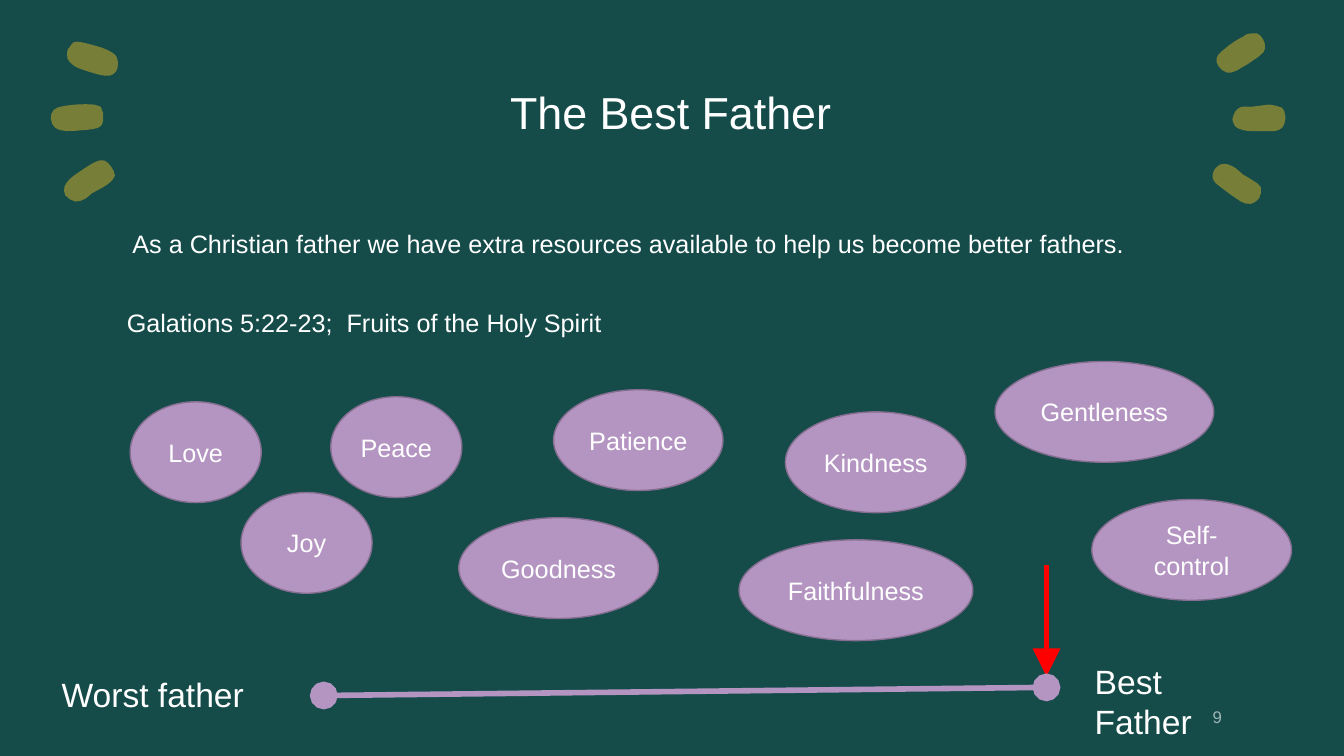
from lxml import etree
from pptx import Presentation, util as u
from pptx.dml.color import RGBColor
from pptx.enum import shapes, text
from pptx.oxml.ns import qn

NIGHT = RGBColor(0x0B, 0x28, 0x27)
TEAL = RGBColor(0x15, 0x4C, 0x4A)
OLIVE = RGBColor(0x76, 0x7E, 0x37)
LILAC = RGBColor(0xB4, 0x95, 0xC2)
PLUM = RGBColor(0x85, 0x6E, 0x90)
RED = RGBColor(0xFF, 0x00, 0x00)
WHITE = RGBColor(0xFF, 0xFF, 0xFF)
FONT = "Arial"
CURVE_STEPS = 2

LEFT_RAYS = [
    [(22.3, 10.2), (16.6, 10.2), (13.7, 13.8), (12.2, 16), (12.2, 21.8), (15.8, 26.1), (20.9, 29),
     (34.6, 33.3), (42.5, 34), (46.8, 31.1), (48.2, 26.8), (47.5, 21), (43.9, 17.4), (36, 13.8)],
    [(30.2, 72.2), (23.8, 72.9), (11.5, 73.6), (3.5, 71.4), (0.3, 65), (2.3, 58.5),
     (10.1, 55.6), (25.2, 54.4), (36, 56.3), (37.7, 65.7), (35.5, 70.5)],
    [(42.5, 110.3), (37.4, 113.9), (29.5, 118.2), (25.2, 121.8), (18, 124), (10.8, 119.7), (10.1, 113.2),
     (14.4, 107.4), (20.2, 103.1), (24.5, 100.2), (31.7, 95.9), (38.2, 94.5), (43.2, 98.8), (46.1, 105.3)],
]
RIGHT_RAYS = [
    [(8.6, 16.7), (18, 9.5), (24.5, 5.9), (26.6, 4.5), (33.8, 3.8), (38.2, 8.1),
     (39.6, 14.6), (35.3, 20.3), (19.4, 30.4), (12.2, 31.8), (6.5, 27.5), (5, 21.8)],
    [(46.8, 73.6), (38.9, 73.6), (28.8, 73.6), (23.8, 72.9), (18.7, 70.7), (16.6, 66.4), (16.6, 64.2), (18.7, 59.2),
     (23, 56.3), (29.5, 56.3), (41, 54.9), (43.9, 54.9), (51.8, 57), (54, 62.1), (54, 66.4), (51.8, 71.4)],
    [(2.9, 108.9), (2.2, 105.3), (2.9, 102.4), (4.3, 100.2), (7.9, 97.4), (13, 97.4), (18.7, 100.2), (23.8, 104.6),
     (31, 108.9), (36.7, 113.9), (35.3, 121.8), (30.2, 125.4), (27.4, 125.4), (22.3, 124), (7.2, 113.2)],
]
FRUITS = [
    ("Love", 0, 28.8, 93.6),
    ("Goodness", 234.7, 111.6, 142.6),
    ("Kindness", 468, 36, 129),
    ("Patience", 302.4, 20.2, 121),
    ("Peace", 143.3, 25.2, 93.6),
    ("Joy", 79.2, 93.6, 93.6),
    ("Faithfulness", 434.9, 127.4, 167),
    ("Gentleness", 617.8, 0, 156.2),
    ("Self-control", 686.9, 98.6, 142.6),
]
FRUIT_HEIGHT = 72


def paint(shape, color):
    shape.shadow.inherit = False
    shape.fill.solid()
    shape.fill.fore_color.rgb = color
    shape.line.fill.background()


def add_run(paragraph, words, size):
    run = paragraph.add_run()
    run.text = words
    run.font.name = FONT
    run.font.size = u.Pt(size)
    run.font.color.rgb = WHITE
    return run


def add_label(slide, box, words, size):
    label = slide.shapes.add_textbox(*map(u.Pt, box))
    label.text_frame.word_wrap = True
    return label.text_frame, add_run(label.text_frame.paragraphs[0], words, size)


def set_insets(frame, vertical):
    frame.margin_left = frame.margin_right = 0
    frame.margin_top = frame.margin_bottom = u.Pt(vertical)
    frame.vertical_anchor = text.MSO_ANCHOR.MIDDLE


def add_backdrop(slide, box):
    slide.background.fill.solid()
    slide.background.fill.fore_color.rgb = NIGHT
    paint(slide.shapes.add_shape(shapes.MSO_SHAPE.RECTANGLE, *map(u.Pt, box)), TEAL)


def smooth_outline(knots):
    count = len(knots)
    points = []
    for index in range(count):
        before, start, end, after = (knots[(index + shift) % count] for shift in (-1, 0, 1, 2))
        for step in range(CURVE_STEPS):
            t = step / CURVE_STEPS
            points.append(tuple(
                0.5 * (2 * b + (c - a) * t + (2 * a - 5 * b + 4 * c - d) * t ** 2
                       + (3 * b - a - 3 * c + d) * t ** 3)
                for a, b, c, d in zip(before, start, end, after)))
    return points


def add_rays(slide, left, top, rays):
    for knots in rays:
        points = [(u.Pt(left + x), u.Pt(top + y)) for x, y in smooth_outline(knots)]
        builder = slide.shapes.build_freeform(*points[0])
        builder.add_line_segments(points[1:], close=True)
        paint(builder.convert_to_shape(), OLIVE)


def add_title(slide, box):
    frame, _ = add_label(slide, box, "The Best Father", 32)
    set_insets(frame, 0)
    frame.paragraphs[0].alignment = text.PP_ALIGN.CENTER


def add_page_number(slide, box):
    frame, run = add_label(slide, box, "9", 12)
    set_insets(frame, 14.4)
    frame.paragraphs[0].line_spacing = 1.2
    properties = run._r.get_or_add_rPr()
    properties.set("spc", "20")
    color = properties.find(".//" + qn("a:srgbClr"))
    etree.SubElement(color, qn("a:alpha")).set("val", "58000")


def add_introduction(slide, left, top):
    add_label(slide, (left + 4, top, 736, 29),
              "As a Christian father we have extra resources available to help us become better fathers.", 18)
    add_label(slide, (left, top + 56.4, 364, 29), "Galations 5:22-23;  Fruits of the Holy Spirit", 18)


def add_fruits(slide, left, top):
    for name, x, y, width in FRUITS:
        fruit = slide.shapes.add_shape(
            shapes.MSO_SHAPE.OVAL, u.Pt(left + x), u.Pt(top + y), u.Pt(width), u.Pt(FRUIT_HEIGHT))
        paint(fruit, LILAC)
        fruit.line.color.rgb = PLUM
        fruit.line.width = u.Pt(1)
        frame = fruit.text_frame
        frame.word_wrap = True
        frame.vertical_anchor = text.MSO_ANCHOR.MIDDLE
        frame.paragraphs[0].alignment = text.PP_ALIGN.CENTER
        add_run(frame.paragraphs[0], name, 18)


def add_line(slide, start, end, color, **ends):
    line = slide.shapes.add_connector(shapes.MSO_CONNECTOR.STRAIGHT, *map(u.Pt, start + end))
    line.line.color.rgb = color
    line.line.width = u.Pt(4)
    properties = line._element.spPr
    outline = properties.find(qn("a:ln"))
    for end_name, kind in ends.items():
        etree.SubElement(outline, qn("a:" + end_name), type=kind, w="lg", len="lg")
    etree.SubElement(properties, qn("a:effectLst"))


def add_scale(slide, left, top):
    best = (left + 710.6, top + 87.1)
    add_line(slide, (best[0], top), (best[0], top + 79.2), RED, tailEnd="triangle")
    add_line(slide, (left + 194.4, top + 92.9), best, LILAC, headEnd="oval", tailEnd="oval")
    add_label(slide, (left, top + 74.2, 150, 36), "Worst father", 24)
    add_label(slide, (left + 738, top + 64.6, 138, 36), "Best Father", 24)


def main():
    presentation = Presentation()
    presentation.slide_width = u.Pt(960)
    presentation.slide_height = u.Pt(540)
    slide = presentation.slides.add_slide(presentation.slide_layouts[6])
    add_backdrop(slide, (0, 0, 960, 540))
    add_rays(slide, 36, 20, LEFT_RAYS)
    add_rays(slide, 864, 20, RIGHT_RAYS)
    add_title(slide, (56.9, 49, 844.6, 62))
    add_page_number(slide, (866.2, 482, 93.6, 56.9))
    add_introduction(slide, 83.5, 159.8)
    add_fruits(slide, 93, 258.2)
    add_scale(slide, 36.9, 403.9)
    presentation.save("out.pptx")


if __name__ == "__main__":
    main()
